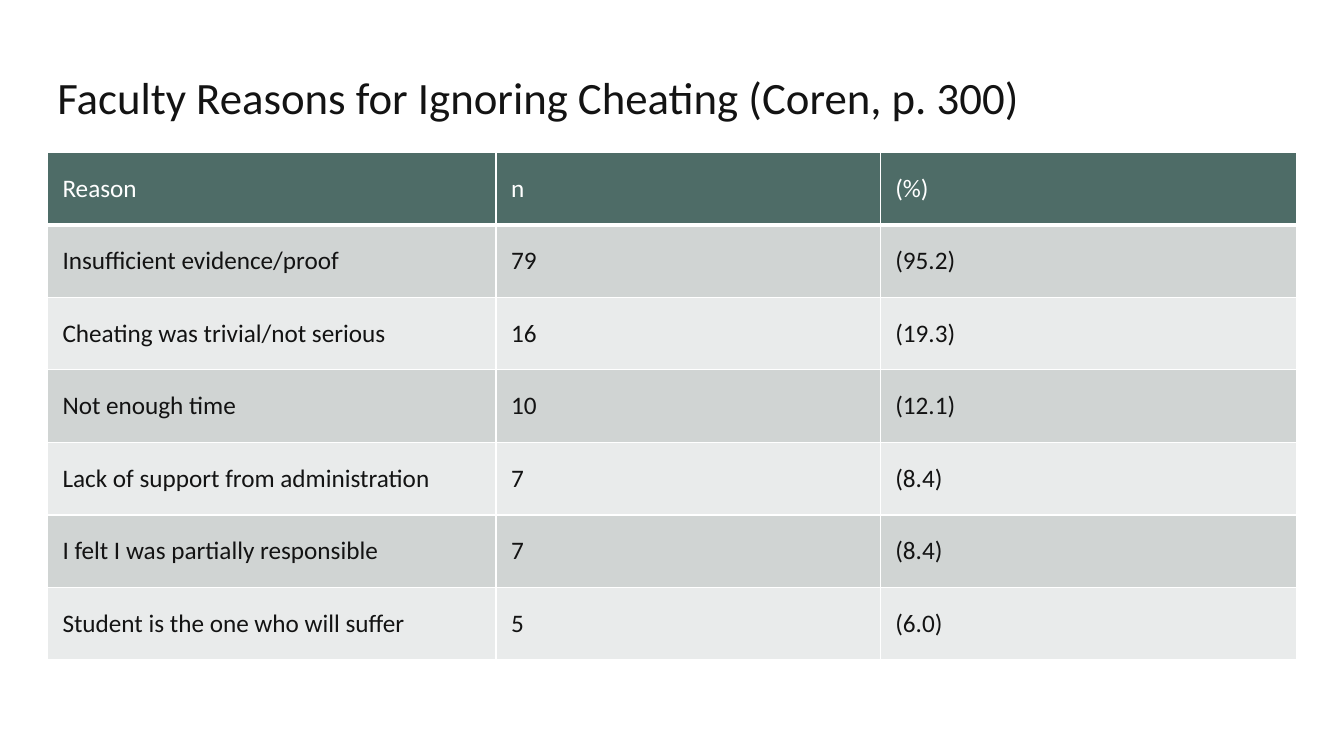
from lxml import etree
from pptx import Presentation
from pptx.dml.color import RGBColor
from pptx.enum.text import MSO_ANCHOR
from pptx.oxml.ns import qn
from pptx.util import Inches, Pt

MIDDLE = MSO_ANCHOR.MIDDLE
TOP = MSO_ANCHOR.TOP
FONT = "Calibri"
INK = "131313"
WHITE = "FFFFFF"
HEADER_FILL = "4E6C67"
BAND_FILLS = ("E9EBEB", "D0D4D3")

LEFT, WIDTH = 0.47, 12.39
COLUMN_WIDTHS = (4.45, 3.81, 4.13)
ROW_HEIGHT = 0.72
CELL_MARGIN = 0.15

TITLE = "Faculty Reasons for Ignoring Cheating (Coren, p. 300)"
REASONS = (
    ("Reason", "n", "(%)"),
    ("Insufficient evidence/proof", "79", "(95.2)"),
    ("Cheating was trivial/not serious", "16", "(19.3)"),
    ("Not enough time", "10", "(12.1)"),
    ("Lack of support from administration", "7", "(8.4)"),
    ("I felt I was partially responsible", "7", "(8.4)"),
    ("Student is the one who will suffer", "5", "(6.0)"),
)


def color(value):
    """Turn a hex string into a colour."""
    return RGBColor.from_string(value)


def add_span(para, text, size, ink):
    """Add one styled run to a paragraph."""
    span = para.add_run()
    span.text = text
    span.font.name = FONT
    span.font.size = Pt(size)
    span.font.color.rgb = color(ink)


def add_title(page, text):
    """Add the slide heading."""
    box = page.shapes.add_textbox(
        Inches(LEFT), Inches(0.7), Inches(WIDTH), Inches(0.81))
    frame = box.text_frame
    frame.word_wrap = True
    frame.vertical_anchor = TOP
    para = frame.paragraphs[0]
    para.line_spacing = 0.9
    add_span(para, text, 32, INK)


def set_borders(cell, top, bottom):
    """Draw white borders, with the top and bottom widths in points."""
    properties = cell._tc.get_or_add_tcPr()
    widths = {"a:lnL": 1, "a:lnR": 1, "a:lnT": top, "a:lnB": bottom}
    for position, (tag, width) in enumerate(widths.items()):
        line = etree.Element(qn(tag), w=str(Pt(width)))
        fill = etree.SubElement(line, qn("a:solidFill"))
        etree.SubElement(fill, qn("a:srgbClr"), val=WHITE)
        properties.insert(position, line)


def fill_cell(cell, text, row_index):
    """Style a cell by its row and write its text."""
    is_header = row_index == 0
    cell.fill.solid()
    cell.fill.fore_color.rgb = color(
        HEADER_FILL if is_header else BAND_FILLS[row_index % 2])
    cell.vertical_anchor = MIDDLE
    cell.margin_left = cell.margin_right = Inches(CELL_MARGIN)
    cell.margin_top = cell.margin_bottom = Inches(CELL_MARGIN)
    set_borders(cell, 3 if row_index == 1 else 1, 3 if is_header else 1)
    add_span(cell.text_frame.paragraphs[0], text, 18,
             WHITE if is_header else INK)


def add_reason_table(page, rows):
    """Add the table of reasons with counts and percentages."""
    table = page.shapes.add_table(
        len(rows), len(COLUMN_WIDTHS), Inches(LEFT), Inches(1.51),
        Inches(WIDTH), Inches(ROW_HEIGHT * len(rows))).table
    for column, width in zip(table.columns, COLUMN_WIDTHS):
        column.width = Inches(width)
    for row_index, texts in enumerate(rows):
        table.rows[row_index].height = Inches(ROW_HEIGHT)
        for column_index, text in enumerate(texts):
            fill_cell(table.cell(row_index, column_index), text, row_index)


def main():
    """Build and save the slide."""
    deck = Presentation()
    deck.slide_width = Inches(13.33)
    deck.slide_height = Inches(7.5)
    page = deck.slides.add_slide(deck.slide_layouts[6])
    add_title(page, TITLE)
    add_reason_table(page, REASONS)
    deck.save("out.pptx")


if __name__ == "__main__":
    main()
